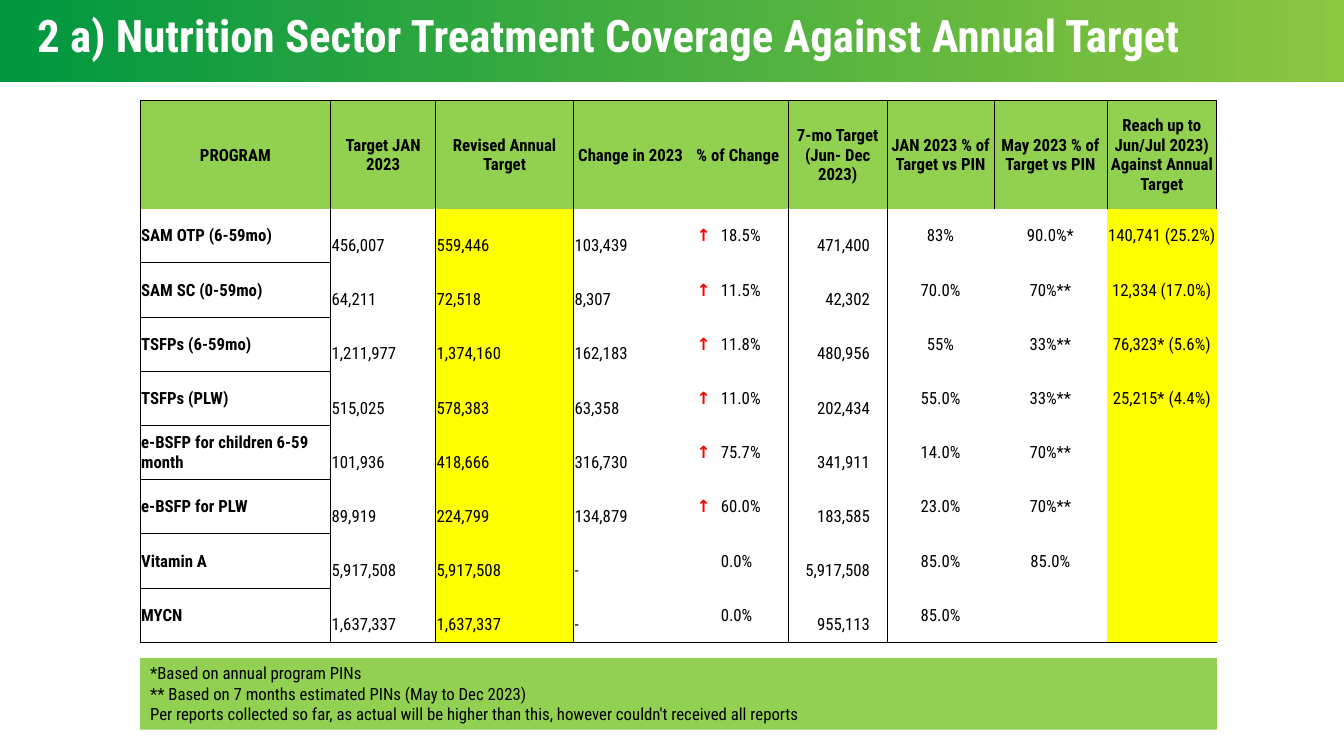
from copy import deepcopy

from lxml.etree import SubElement
from pptx import Presentation
from pptx.dml.color import RGBColor
from pptx.enum.shapes import MSO_SHAPE as Preset
from pptx.enum.text import MSO_ANCHOR as Anchor, PP_ALIGN as Align
from pptx.oxml.ns import qn
from pptx.util import Emu, Pt

EMU_PER_PX = 9144
FONT = "Roboto Condensed"
BLACK, WHITE, RED = "000000", "FFFFFF", "FF0000"
GREEN, NOTE_GREEN, YELLOW = "92D050", "92D051", "FFFF00"

COLUMN_WIDTHS = [189, 104, 137, 113, 32, 68, 98, 106, 112, 109]
HEADER_HEIGHT, BODY_HEIGHT = 107, 430
HEADER_RULES = {0, 1, 2, 3, 6, 7, 8, 9, 10}
BODY_RULES = {0, 1, 2, 3, 6, 7}
PROGRAM, REVISED, ARROW, MERGED, SEVEN_MONTH, REACH = 0, 2, 4, 5, 6, 9
LOWERED = {1, 2, 3, 6}
CENTRED = {4, 7, 8, 9}

HEADERS = [
    "PROGRAM", "Target JAN 2023", "Revised Annual Target", "Change in 2023",
    "% of Change", "", "7-mo Target\n(Jun- Dec 2023)",
    "JAN 2023 % of Target vs PIN", "May 2023 % of Target vs PIN",
    "Reach up to Jun/Jul 2023) Against Annual Target",
]
PROGRAMS = [
    ["SAM OTP (6-59mo)", "456,007", "559,446", "103,439", "↑", "18.5%",
     "471,400", "83%", "90.0%*", "140,741 (25.2%)"],
    ["SAM SC (0-59mo)", "64,211", "72,518", "8,307", "↑", "11.5%",
     "42,302", "70.0%", "70%**", "12,334 (17.0%)"],
    ["TSFPs (6-59mo)", "1,211,977", "1,374,160", "162,183", "↑", "11.8%",
     "480,956", "55%", "33%**", "76,323* (5.6%)"],
    ["TSFPs (PLW)", "515,025", "578,383", "63,358", "↑", "11.0%",
     "202,434", "55.0%", "33%**", "25,215* (4.4%)"],
    ["e-BSFP for children 6-59 month", "101,936", "418,666", "316,730", "↑",
     "75.7%", "341,911", "14.0%", "70%**", ""],
    ["e-BSFP for PLW", "89,919", "224,799", "134,879", "↑", "60.0%",
     "183,585", "23.0%", "70%**", ""],
    ["Vitamin A", "5,917,508", "5,917,508", "-", "", "0.0%",
     "5,917,508", "85.0%", "85.0%", ""],
    ["MYCN", "1,637,337", "1,637,337", "-", "", "0.0%",
     "955,113", "85.0%", "", ""],
]
NOTES = """*Based on annual program PINs
** Based on 7 months estimated PINs (May to Dec 2023)
Per reports collected so far, as actual will be higher than this, however couldn't received all reports"""


def px(length):
    return Emu(round(length * EMU_PER_PX))


def colour(code):
    return RGBColor.from_string(code)


def write(frame, text, size=12, ink=BLACK, bold=False, align=Align.LEFT, spacing=None):
    frame.word_wrap = True
    for index, line in enumerate(text.split("\n")):
        para = frame.paragraphs[0] if index == 0 else frame.add_paragraph()
        para.alignment = align
        if spacing:
            para.line_spacing = spacing
        span = para.add_run()
        span.text = line
        span.font.name = FONT
        span.font.size = Pt(size)
        span.font.bold = bold
        span.font.color.rgb = colour(ink)


def add_box(page, left, top, width, height):
    box = page.shapes.add_shape(Preset.RECTANGLE, px(left), px(top), px(width), px(height))
    box.shadow.inherit = False
    box.line.fill.background()
    return box


def add_banner(page):
    banner = add_box(page, 0, -10, 1333, 91)
    banner.fill.gradient()
    banner.fill.gradient_angle = 0
    stops = banner.fill.gradient_stops
    first = banner._element.spPr.find(".//" + qn("a:gs"))
    first.addnext(deepcopy(first))
    stops = banner.fill.gradient_stops
    for stop, (position, code) in zip(stops, [(0, "009740"), (0.85, "78BF3F"), (1, "8DC63F")]):
        stop.position = position
        stop.color.rgb = colour(code)


def add_title(page, text):
    box = page.shapes.add_textbox(px(27), px(2), px(1292), px(71))
    box.text_frame.vertical_anchor = Anchor.MIDDLE
    write(box.text_frame, text, size=32, ink=WHITE, bold=True, spacing=0.9)


def add_notes(page):
    box = add_box(page, 139, 653, 1068, 71)
    box.fill.solid()
    box.fill.fore_color.rgb = colour(NOTE_GREEN)
    box.text_frame.vertical_anchor = Anchor.TOP
    write(box.text_frame, NOTES)


def set_borders(cell, **sides):
    properties = cell._tc.get_or_add_tcPr()
    for side in "LRTB":
        line = SubElement(properties, qn("a:ln" + side), w=str(Pt(0.5)))
        if sides[side]:
            fill = SubElement(line, qn("a:solidFill"))
            SubElement(fill, qn("a:srgbClr"), val=BLACK)
        else:
            SubElement(line, qn("a:noFill"))


def paint(cell, code):
    if code:
        cell.fill.solid()
        cell.fill.fore_color.rgb = colour(code)
    else:
        cell.fill.background()


def format_cell(cell, text, row, column):
    header = row == 0
    last = row == len(PROGRAMS)
    rules = HEADER_RULES if header else BODY_RULES
    set_borders(
        cell,
        L=column in rules,
        R=column + 1 in rules,
        T=header or (column == PROGRAM and row > 1),
        B=last or (column == PROGRAM and not header),
    )
    paint(cell, GREEN if header else YELLOW if column in (REVISED, REACH) else None)
    lowered = not header and column in LOWERED
    seven_month = not header and column == SEVEN_MONTH
    cell.vertical_anchor = Anchor.MIDDLE
    cell.margin_left = px(1)
    cell.margin_right = px(17 if seven_month else 1)
    cell.margin_top = px(20 if lowered else 1)
    cell.margin_bottom = 0
    if text:
        centred = header or column in CENTRED
        write(
            cell.text_frame, text,
            ink=RED if not header and column == ARROW else BLACK,
            bold=header or column in (PROGRAM, ARROW),
            align=Align.RIGHT if seven_month else Align.CENTER if centred else Align.LEFT,
        )


def add_coverage_table(page):
    rows = [HEADERS] + PROGRAMS
    frame = page.shapes.add_table(
        len(rows), len(HEADERS), px(139), px(100),
        px(sum(COLUMN_WIDTHS)), px(HEADER_HEIGHT + BODY_HEIGHT))
    table = frame.table
    table.first_row = False
    table.horz_banding = False
    for column, width in zip(table.columns, COLUMN_WIDTHS):
        column.width = px(width)
    for index, row in enumerate(table.rows):
        row.height = px(BODY_HEIGHT / len(PROGRAMS) if index else HEADER_HEIGHT)
    table.cell(0, ARROW).merge(table.cell(0, MERGED))
    for row, values in enumerate(rows):
        for column, text in enumerate(values):
            format_cell(table.cell(row, column), text, row, column)


def main():
    deck = Presentation()
    deck.slide_width, deck.slide_height = px(1333), px(750)
    page = deck.slides.add_slide(deck.slide_layouts[6])
    add_banner(page)
    add_title(page, "2 a) Nutrition Sector Treatment Coverage Against Annual Target")
    add_coverage_table(page)
    add_notes(page)
    deck.save("out.pptx")


if __name__ == "__main__":
    main()
